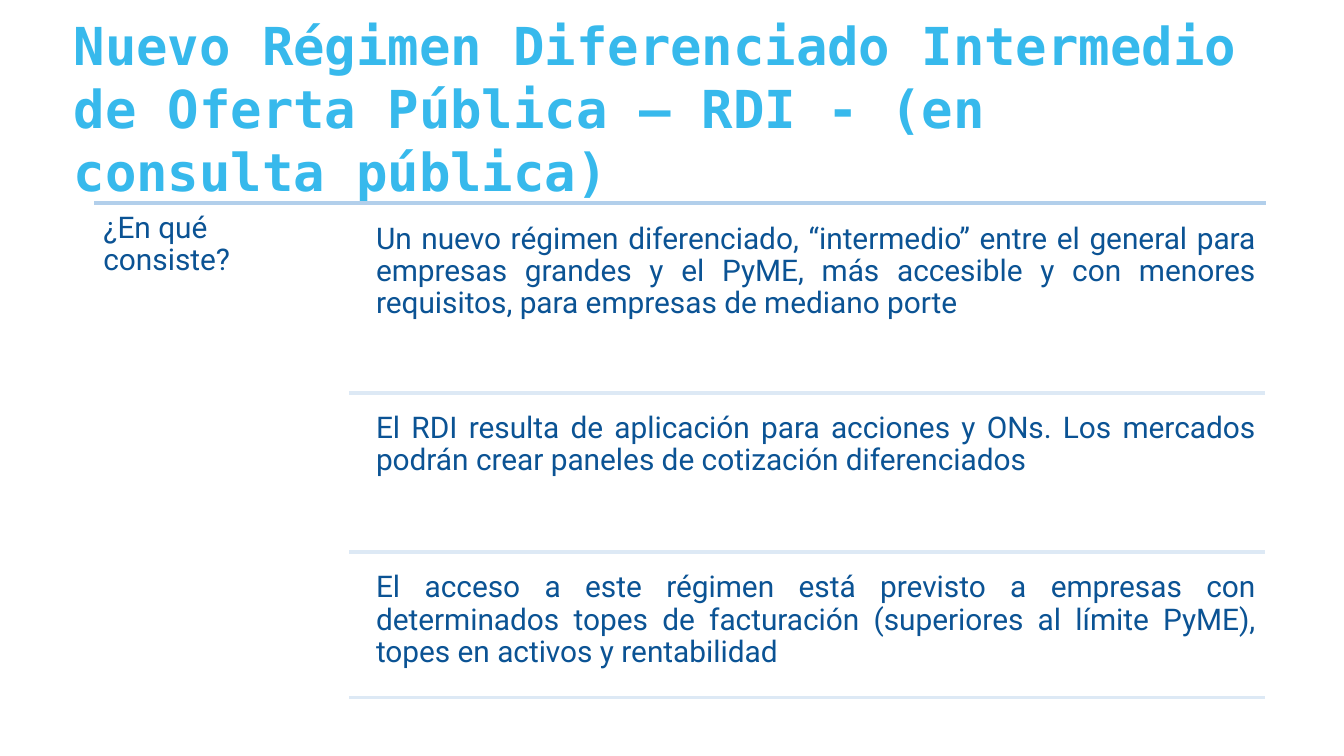
"""Builds the slide on the intermediate public offering regime (RDI)."""
from lxml.etree import SubElement
from pptx import Presentation
from pptx.dml.color import RGBColor
from pptx.enum.shapes import MSO_CONNECTOR
from pptx.enum.text import MSO_ANCHOR, PP_ALIGN
from pptx.oxml.ns import qn
from pptx.util import Pt

SKY = RGBColor(0x37, 0xB9, 0xEC)
NAVY = RGBColor(0x0B, 0x53, 0x94)
HEADER_RULE = RGBColor(0xB2, 0xCF, 0xEB)
ROW_RULE = RGBColor(0xDD, 0xE9, 0xF5)

presentation = Presentation()
presentation.slide_width = Pt(720)
presentation.slide_height = Pt(405)
slide = presentation.slides.add_slide(presentation.slide_layouts[6])


def add_text(text, left, top, width, height, size=16, font="Roboto", color=NAVY,
             bold=False, inset=5.04, spacing=0.9, align=PP_ALIGN.LEFT):
    shape = slide.shapes.add_textbox(Pt(left), Pt(top), Pt(width), Pt(height))
    frame = shape.text_frame
    frame.word_wrap = True
    frame.vertical_anchor = MSO_ANCHOR.TOP
    frame.margin_left = frame.margin_right = Pt(inset)
    frame.margin_top = frame.margin_bottom = Pt(inset)
    paragraph = frame.paragraphs[0]
    paragraph.alignment = align
    paragraph.line_spacing = spacing
    run = paragraph.add_run()
    run.text = text
    run.font.size = Pt(size)
    run.font.name = font
    run.font.bold = bold
    run.font.color.rgb = color


def add_rule(left, right, y, color):
    connector = slide.shapes.add_connector(
        MSO_CONNECTOR.STRAIGHT, Pt(left), Pt(y), Pt(right), Pt(y))
    connector.line.color.rgb = color
    connector.line.width = Pt(2)
    SubElement(connector._element.spPr, qn("a:effectLst"))


add_text("Nuevo Régimen Diferenciado Intermedio de Oferta Pública – RDI - (en consulta pública)",
         32.4, 0, 650.2, 48.2, size=28, font="DejaVu Sans Mono", color=SKY,
         bold=True, inset=7.2, spacing=Pt(33.7))

add_rule(50.4, 678, 108.9, HEADER_RULE)
add_text("¿En qué consiste?", 50.4, 108.9, 136.8, 270.7)

rows = [
    ("Un nuevo régimen diferenciado, “intermedio” entre el general para empresas grandes "
     "y el PyME, más accesible y con menores requisitos, para empresas de mediano porte",
     114.6, 210.4),
    ("El RDI resulta de aplicación para acciones y ONs. Los mercados podrán crear "
     "paneles de cotización diferenciados", 216.2, 295.7),
    ("El acceso a este régimen está previsto a empresas con determinados topes de "
     "facturación (superiores al límite PyME), topes en activos y rentabilidad",
     301.5, 373.7),
]
for text, top, bottom in rows:
    add_text(text, 196.4, top, 481.6, bottom - top, align=PP_ALIGN.JUSTIFY)
    add_rule(187.2, 677.7, bottom, ROW_RULE)

presentation.save("out.pptx")
